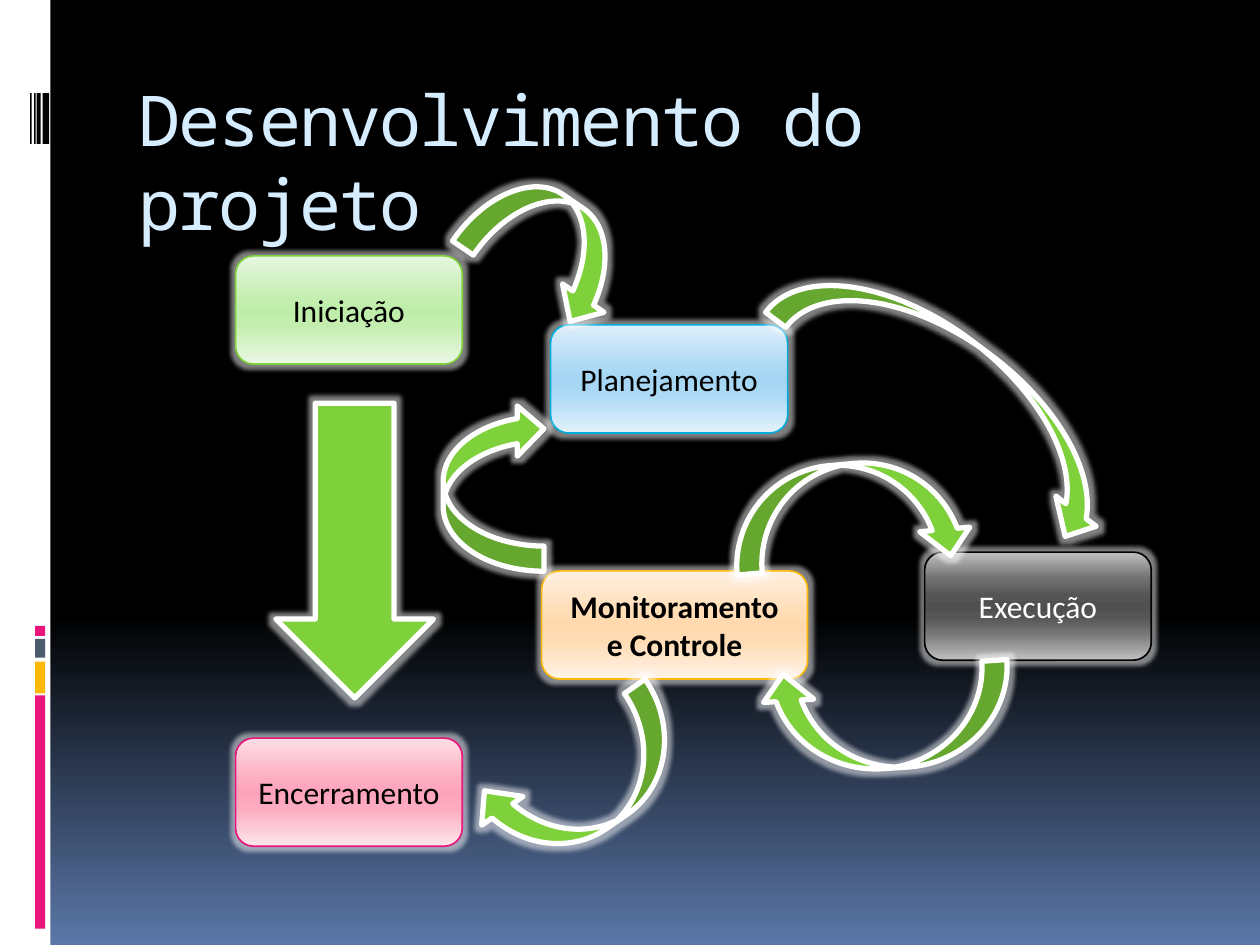
import pptx
import pptx.dml.color
import pptx.enum.shapes
import pptx.enum.text
import pptx.oxml
import pptx.oxml.ns
import pptx.util

Cm = pptx.util.Cm
Pt = pptx.util.Pt
RGBColor = pptx.dml.color.RGBColor
SHAPE = pptx.enum.shapes.MSO_SHAPE
ANCHOR = pptx.enum.text.MSO_ANCHOR
ALIGN = pptx.enum.text.PP_ALIGN
NSDECL = pptx.oxml.ns.nsdecls("a")

BLACK = RGBColor(0x00, 0x00, 0x00)
WHITE = RGBColor(0xFF, 0xFF, 0xFF)
PINK = RGBColor(0xEA, 0x15, 0x7A)
AMBER = RGBColor(0xFE, 0xB8, 0x0A)
SLATE = RGBColor(0x4E, 0x5B, 0x6F)
GREEN = RGBColor(0x7F, 0xD1, 0x3B)
BLUE = RGBColor(0x00, 0xAD, 0xDC)
TITLE_BLUE = RGBColor(0xD6, 0xEC, 0xFF)
NIGHT_BLUE = RGBColor(0x5B, 0x77, 0xA8)

BOX_H = 2.18
ARROW_H = 2.03


def set_gradient(fill, element, stops):
    """Fill from top to bottom with (percent, colour) stops."""
    fill.gradient()
    fill.gradient_angle = 270
    gs_list = element.xpath(".//a:gsLst")[0]
    for gs in list(gs_list):
        gs_list.remove(gs)
    for percent, color in stops:
        gs_list.append(pptx.oxml.parse_xml(
            f'<a:gs {NSDECL} pos="{percent * 1000}"><a:srgbClr val="{color}"/></a:gs>'))


def add_glow(sp):
    sp.element.spPr.append(pptx.oxml.parse_xml(
        f'<a:effectLst {NSDECL}><a:glow rad="63500"><a:srgbClr val="FFFFFF">'
        '<a:alpha val="50000"/></a:srgbClr></a:glow></a:effectLst>'))


def add_bar(s, left, top, width, height, color):
    sp = s.shapes.add_shape(SHAPE.RECTANGLE, Cm(left), Cm(top), Cm(width), Cm(height))
    sp.shadow.inherit = False
    sp.fill.solid()
    sp.fill.fore_color.rgb = color
    sp.line.fill.background()


def style_run(r, size, font, color, bold=False):
    r.font.size = Pt(size)
    r.font.name = font
    r.font.color.rgb = color
    r.font.bold = bold


def add_title(s, text):
    tf = s.shapes.add_textbox(Cm(2.54), Cm(1.42), Cm(21.59), Cm(2.54)).text_frame
    tf.word_wrap = True
    tf.text = text
    r = tf.paragraphs[0].runs[0]
    style_run(r, 40, "Noto Sans Mono", TITLE_BLUE)
    r.font._element.set("spc", "-100")


def add_phase(s, text, left, top, width, line, stops, color=BLACK, bold=False):
    sp = s.shapes.add_shape(SHAPE.ROUNDED_RECTANGLE,
                            Cm(left), Cm(top), Cm(width), Cm(BOX_H))
    set_gradient(sp.fill, sp.element, stops)
    sp.line.color.rgb = line
    sp.line.width = Pt(0.94)
    add_glow(sp)
    tf = sp.text_frame
    tf.word_wrap = True
    tf.vertical_anchor = ANCHOR.MIDDLE
    tf.text = text
    p = tf.paragraphs[0]
    p.alignment = ALIGN.CENTER
    style_run(p.runs[0], 18, "Calibri", color, bold)


def add_arrow(s, kind, left, top, width, height, rotation=0):
    sp = s.shapes.add_shape(kind, Cm(left), Cm(top), Cm(width), Cm(height))
    sp.rotation = rotation
    sp.fill.solid()
    sp.fill.fore_color.rgb = GREEN
    sp.line.color.rgb = WHITE
    sp.line.width = Pt(3)
    add_glow(sp)
    return sp


def soft_stops(edge, near, middle, end):
    return list(zip((0, 40, 50, 65, 100), (edge, near, middle, near, end)))


def main():
    prs = pptx.Presentation()
    prs.slide_width, prs.slide_height = Cm(25.4), Cm(19.05)
    s = prs.slides.add_slide(prs.slide_layouts[6])
    set_gradient(s.background.fill, s.element,
                 [(0, BLACK), (65, BLACK), (100, NIGHT_BLUE)])

    # Side strip with colour blocks and barcode
    add_bar(s, 0, 0, 1.02, 19.05, WHITE)
    for top, height, color in ((14.02, 4.7, PINK), (13.34, 0.64, AMBER),
                               (12.88, 0.38, SLATE), (12.62, 0.2, PINK)):
        add_bar(s, 0.71, top, 0.2, height, color)
    for left, width in ((0.86, 0.13), (0.74, 0.08), (0.69, 0.03), (0.61, 0.03)):
        add_bar(s, left, 1.88, width, 1.02, BLACK)

    add_title(s, "Desenvolvimento do projeto")

    # Project phases
    add_phase(s, "Iniciação", 4.75, 5.16, 4.57, GREEN,
              soft_stops("E6F7E0", "C4EEB0", "BEEDA9", "ECF8E6"))
    add_phase(s, "Planejamento", 11.1, 6.55, 4.78, BLUE,
              soft_stops("DEEEFA", "ACD9F5", "A4D6F4", "E5F2FB"))
    add_phase(s, "Monitoramento e Controle", 10.92, 11.51, 5.36, AMBER,
              soft_stops("FFF0E1", "FFDCB4", "FFD9AD", "FFF3E7"), bold=True)
    add_phase(s, "Execução", 18.64, 11.13, 4.57, BLACK,
              [(0, "C0C0C0"), (25, "707070"), (40, "555555"), (50, "505050"),
               (60, "555555"), (75, "767676"), (100, "C0C0C0")], WHITE)
    add_phase(s, "Encerramento", 4.75, 14.88, 4.57, PINK,
              soft_stops("FDDEE5", "FDABC0", "FDA3BB", "FDE5EB"))

    # Curved arrows between phases: left, top, width, rotation
    for left, top, width, rotation in (
            (8.26, 8.81, 3.38, 270),
            (9.4, 3.96, 3.38, 34.4),
            (15.34, 13.46, 5.03, 176.2),
            (15.24, 6.88, 8.05, 36.8),
            (9.53, 14.78, 4.45, 145.2),
            (14.76, 9.35, 4.83, 354.8)):
        sp = add_arrow(s, SHAPE.CURVED_DOWN_ARROW, left, top, width, ARROW_H, rotation)
        sp.adjustments[2] = 0.265

    # Straight arrow from start to closing
    add_arrow(s, SHAPE.DOWN_ARROW, 5.56, 8.13, 3.18, 5.94)

    prs.save("out.pptx")


if __name__ == "__main__":
    main()
